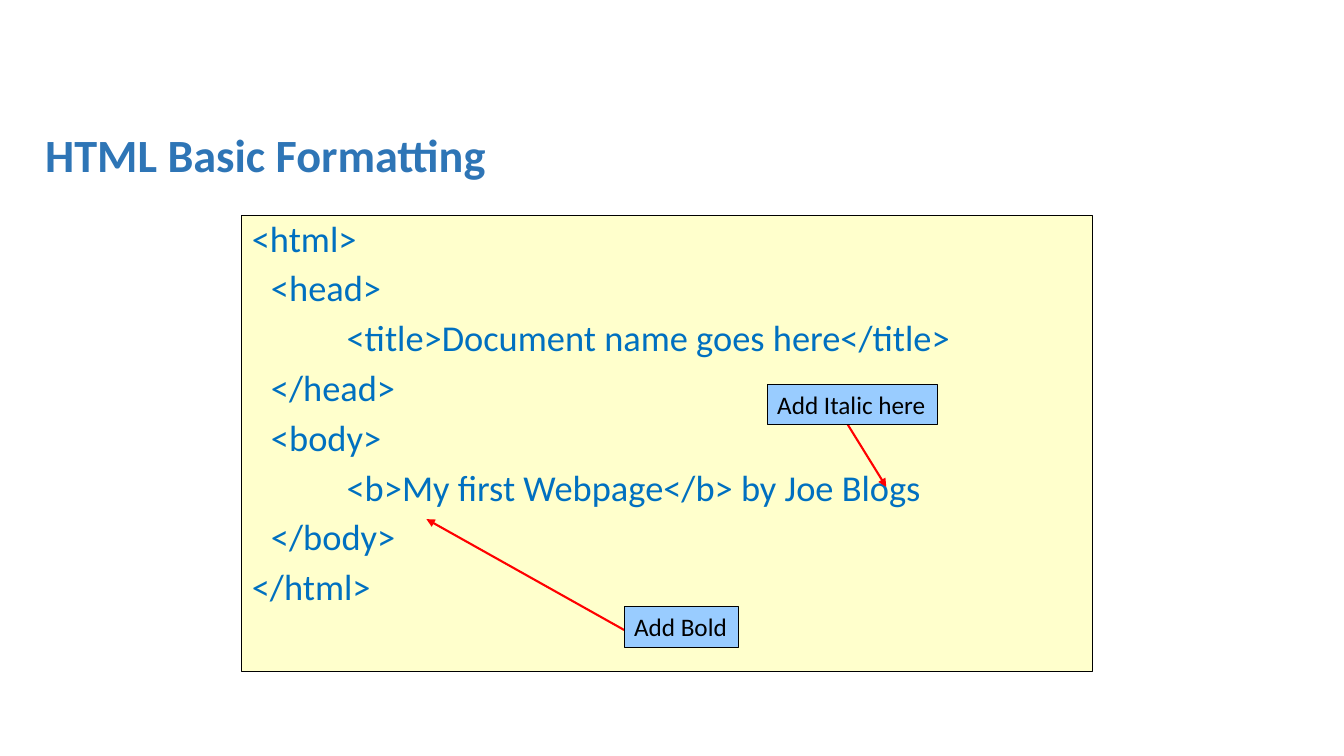
from dataclasses import dataclass

import pptx
import pptx.dml.color
import pptx.enum.shapes
import pptx.enum.text
import pptx.oxml.ns
import pptx.util
from lxml import etree

HEX = {"title": "2E75B6", "code": "0070C0", "panel": "FFFFCC",
       "label": "99CCFF", "edge": "000000", "arrow": "FF0000"}
WIDE, HIGH = 13.33, 7.5
STEPS = (0, 0.19, 0.94)
CODE = (
    (0, "<html>"),
    (1, "<head>"),
    (2, "<title>Document name goes here</title>"),
    (1, "</head>"),
    (1, "<body>"),
    (2, "<b>My first Webpage</b> by Joe Blogs"),
    (1, "</body>"),
    (0, "</html>"),
)


@dataclass
class Box:
    """Left, top, width and height in percent of the slide."""
    left: float
    top: float
    width: float
    height: float


@dataclass
class Note:
    text: str
    box: Box
    tip: tuple[float, float]
    tail: tuple[float, float]


TITLE = Box(2.63, 14.27, 95.12, 13.2)
PANEL = Box(18, 28.53, 63.32, 60.27)
NOTES = (
    Note("Add Bold", Box(46.44, 80.27, 8.48, 5.33), (31.73, 68.67), (46.44, 83.33)),
    Note("Add Italic here", Box(57.09, 50.8, 12.68, 5.33), (65.94, 64.4), (63.02, 56)),
)


def across(share: float) -> int:
    return pptx.util.Inches(WIDE * share / 100)


def down(share: float) -> int:
    return pptx.util.Inches(HIGH * share / 100)


def place(box: Box) -> tuple[int, int, int, int]:
    return across(box.left), down(box.top), across(box.width), down(box.height)


def color(name: str) -> pptx.dml.color.RGBColor:
    return pptx.dml.color.RGBColor.from_string(HEX[name])


def style(para, size: float, name: str, bold: bool = False) -> None:
    para.alignment = pptx.enum.text.PP_ALIGN.LEFT
    font = para.font
    font.name, font.size, font.bold = "Calibri", pptx.util.Pt(size), bold
    font.color.rgb = color(name)


def add_box(slide, box: Box, fill: str):
    shape = slide.shapes.add_shape(
        pptx.enum.shapes.MSO_SHAPE.RECTANGLE, *place(box))
    shape.shadow.inherit = False
    shape.fill.solid()
    shape.fill.fore_color.rgb = color(fill)
    shape.line.color.rgb = color("edge")
    shape.line.width = pptx.util.Pt(0.75)
    shape.text_frame.vertical_anchor = pptx.enum.text.MSO_ANCHOR.TOP
    return shape


def add_title(slide) -> None:
    frame = slide.shapes.add_textbox(*place(TITLE)).text_frame
    frame.word_wrap = True
    frame.vertical_anchor = pptx.enum.text.MSO_ANCHOR.MIDDLE
    para = frame.paragraphs[0]
    para.text = "HTML Basic Formatting"
    para.line_spacing = 0.9
    style(para, 33, "title", True)


def add_code(slide) -> None:
    frame = add_box(slide, PANEL, "panel").text_frame
    frame.word_wrap = True
    for row, (depth, text) in enumerate(CODE):
        para = frame.add_paragraph() if row else frame.paragraphs[0]
        para.text = text
        para.line_spacing = 0.9
        if row:
            para.space_before = pptx.util.Pt(7.5)
        props = para._p.get_or_add_pPr()
        props.set("marL", str(pptx.util.Inches(STEPS[depth])))
        style(para, 26, "code")


def add_arrow(slide, tip: tuple[float, float], tail: tuple[float, float]) -> None:
    line = slide.shapes.add_connector(
        pptx.enum.shapes.MSO_CONNECTOR.STRAIGHT,
        across(tip[0]), down(tip[1]), across(tail[0]), down(tail[1]))
    line.line.color.rgb = color("arrow")
    line.line.width = pptx.util.Pt(1.5)
    qn = pptx.oxml.ns.qn
    head = etree.SubElement(line.line._get_or_add_ln(), qn("a:headEnd"))
    head.set("type", "triangle")
    etree.SubElement(line._element.spPr, qn("a:effectLst"))


def add_note(slide, note: Note) -> None:
    add_arrow(slide, note.tip, note.tail)
    frame = add_box(slide, note.box, "label").text_frame
    frame.word_wrap = False
    frame.auto_size = pptx.enum.text.MSO_AUTO_SIZE.SHAPE_TO_FIT_TEXT
    frame.text = note.text
    style(frame.paragraphs[0], 18, "edge")


def main() -> None:
    deck = pptx.Presentation()
    deck.slide_width = pptx.util.Inches(WIDE)
    deck.slide_height = pptx.util.Inches(HIGH)
    slide = deck.slides.add_slide(deck.slide_layouts[6])
    add_title(slide)
    add_code(slide)
    for note in NOTES:
        add_note(slide, note)
    deck.save("out.pptx")


if __name__ == "__main__":
    main()
